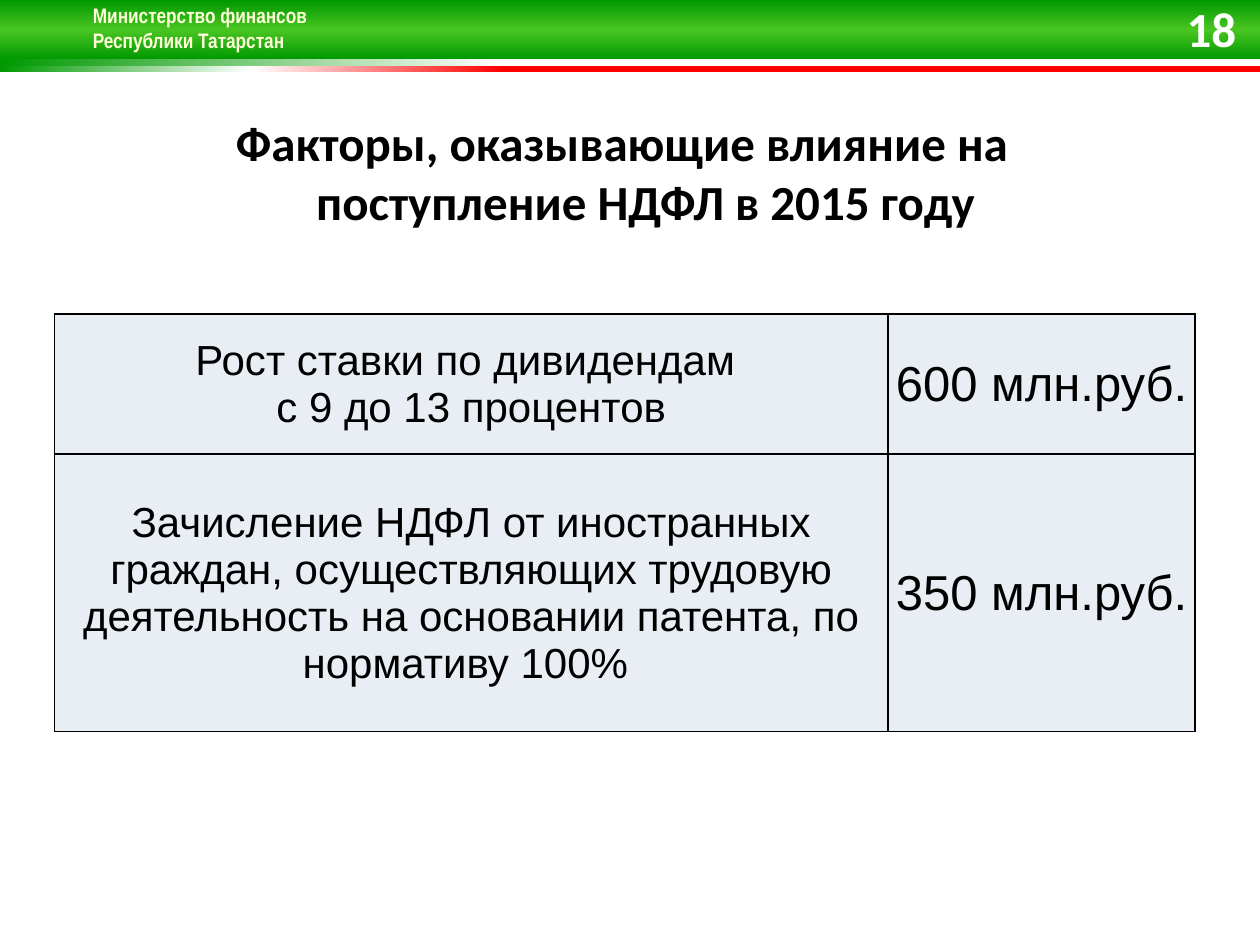
import pptx
import pptx.util
import pptx.dml.color
import pptx.enum.shapes
import pptx.enum.text
import pptx.oxml.ns
from lxml import etree

Pt = pptx.util.Pt
RGB = pptx.dml.color.RGBColor.from_string
qn = pptx.oxml.ns.qn
ALIGN = pptx.enum.text.PP_ALIGN
ANCHOR = pptx.enum.text.MSO_ANCHOR

THEME = {
    "text": "000000", "number": "FFFFFF", "ministry": "FFFFD9",
    "cell": "E9EDF4", "border": "000000",
    "heading_font": "Calibri", "ministry_font": "Arial Narrow", "table_font": "Arial",
    "heading_size": 28, "ministry_size": 12, "factor_size": 24, "amount_size": 28,
}
MINISTRY = "Министерство финансов\vРеспублики Татарстан"
TITLE = "Факторы, оказывающие влияние на \vпоступление НДФЛ в 2015 году "
NUMBER = "18"
FACTORS = [
    ("Рост ставки по дивидендам \vс 9 до 13 процентов", "600 млн.руб."),
    ("Зачисление НДФЛ от иностранных граждан, осуществляющих трудовую "
     "деятельность на основании патента, по нормативу 100% ", "350 млн.руб."),
]
COLUMN_WIDTHS = [476.5, 175.5]
ROW_HEIGHTS = [80, 158.5]
TABLE_LEFT, TABLE_TOP = 31, 179.5
BANDS = [
    (0, 34, 90, [(0, "009900"), (50, "49C522"), (100, "009900")]),
    (34, 3.5, 180, [(0, "FFFFFF"), (60, "FFFFFF"), (100, "009900")]),
    (37.5, 3.5, 180, [(60, "FF0000"), (80, "FFFFFF"), (100, "009900")]),
]


def add_band(slide, width, top, height, angle, stops):
    sp = slide.shapes.add_shape(
        pptx.enum.shapes.MSO_SHAPE.RECTANGLE, 0, Pt(top), width, Pt(height))
    sp.shadow.inherit = False
    sp.line.fill.background()
    sp.fill.gradient()
    sp.fill.gradient_angle = angle
    stop_list = next(sp._element.iter(qn("a:gsLst")))
    for old in list(stop_list):
        stop_list.remove(old)
    for position, color in stops:
        stop = etree.SubElement(stop_list, qn("a:gs"), pos=str(position * 1000))
        etree.SubElement(stop, qn("a:srgbClr"), val=color)


def place(sp, left, top, width, height):
    sp.left, sp.top, sp.width, sp.height = Pt(left), Pt(top), Pt(width), Pt(height)


def write(tf, text, font, size, color, align, bold=False):
    tf.word_wrap = True
    p = tf.paragraphs[0]
    p.text = text
    p.alignment = align
    p.font.name, p.font.size, p.font.bold = font, Pt(size), bold
    p.font.color.rgb = RGB(color)
    return p


def hang(p, indent=27):
    pPr = p._p.get_or_add_pPr()
    pPr.set("marL", str(Pt(indent)))
    pPr.set("indent", str(-Pt(indent)))


def add_text_shadow(p):
    for r in p.runs:
        r.font.color.rgb = RGB(THEME["ministry"])
        effects = etree.Element(qn("a:effectLst"))
        shadow = etree.SubElement(effects, qn("a:outerShdw"), blurRad=str(Pt(3)),
                                  dist=str(Pt(3)), dir="2700000", algn="tl")
        color = etree.SubElement(shadow, qn("a:srgbClr"), val="000000")
        etree.SubElement(color, qn("a:alpha"), val="43000")
        r.font._element.find(qn("a:solidFill")).addnext(effects)


def set_borders(cell):
    tcPr = cell._tc.get_or_add_tcPr()
    for i, side in enumerate(("a:lnL", "a:lnR", "a:lnT", "a:lnB")):
        ln = etree.Element(qn(side), w=str(Pt(1)))
        fill = etree.SubElement(ln, qn("a:solidFill"))
        etree.SubElement(fill, qn("a:srgbClr"), val=THEME["border"])
        tcPr.insert(i, ln)


def add_factor_table(slide):
    table = slide.shapes.add_table(
        len(FACTORS), len(COLUMN_WIDTHS), Pt(TABLE_LEFT), Pt(TABLE_TOP),
        Pt(sum(COLUMN_WIDTHS)), Pt(sum(ROW_HEIGHTS))).table
    table.first_row = table.horz_banding = False
    for column, width in zip(table.columns, COLUMN_WIDTHS):
        column.width = Pt(width)
    for row, height, texts in zip(table.rows, ROW_HEIGHTS, FACTORS):
        row.height = Pt(height)
        sizes = (THEME["factor_size"], THEME["amount_size"])
        for cell, text, size, margin in zip(row.cells, texts, sizes, (5.5, 0.7)):
            cell.margin_left = cell.margin_right = Pt(margin)
            cell.margin_top, cell.margin_bottom = Pt(0.7), 0
            cell.vertical_anchor = ANCHOR.MIDDLE
            cell.fill.solid()
            cell.fill.fore_color.rgb = RGB(THEME["cell"])
            set_borders(cell)
            write(cell.text_frame, text, THEME["table_font"], size, THEME["text"], ALIGN.CENTER)


def main():
    prs = pptx.Presentation()
    prs.slide_width, prs.slide_height = Pt(720), Pt(540)
    slide = prs.slides.add_slide(prs.slide_layouts[5])
    for band in BANDS:
        add_band(slide, prs.slide_width, *band)

    ministry = slide.shapes.add_textbox(Pt(46), Pt(-2), Pt(138), Pt(51))
    p = write(ministry.text_frame, MINISTRY, THEME["ministry_font"],
              THEME["ministry_size"], THEME["ministry"], ALIGN.LEFT, True)
    add_text_shadow(p)

    title = slide.shapes.title
    place(title, -1.5, 60.5, 720, 78)
    title.text_frame.auto_size = pptx.enum.text.MSO_AUTO_SIZE.NONE
    title.text_frame.vertical_anchor = ANCHOR.TOP
    hang(write(title.text_frame, TITLE, THEME["heading_font"],
               THEME["heading_size"], THEME["text"], ALIGN.CENTER, True))

    number = slide.shapes.add_textbox(Pt(667.5), Pt(3.5), Pt(46), Pt(24.5))
    number.text_frame.vertical_anchor = ANCHOR.MIDDLE
    hang(write(number.text_frame, NUMBER, THEME["heading_font"],
               THEME["heading_size"], THEME["number"], ALIGN.RIGHT, True))

    add_factor_table(slide)
    prs.save("out.pptx")


if __name__ == "__main__":
    main()
